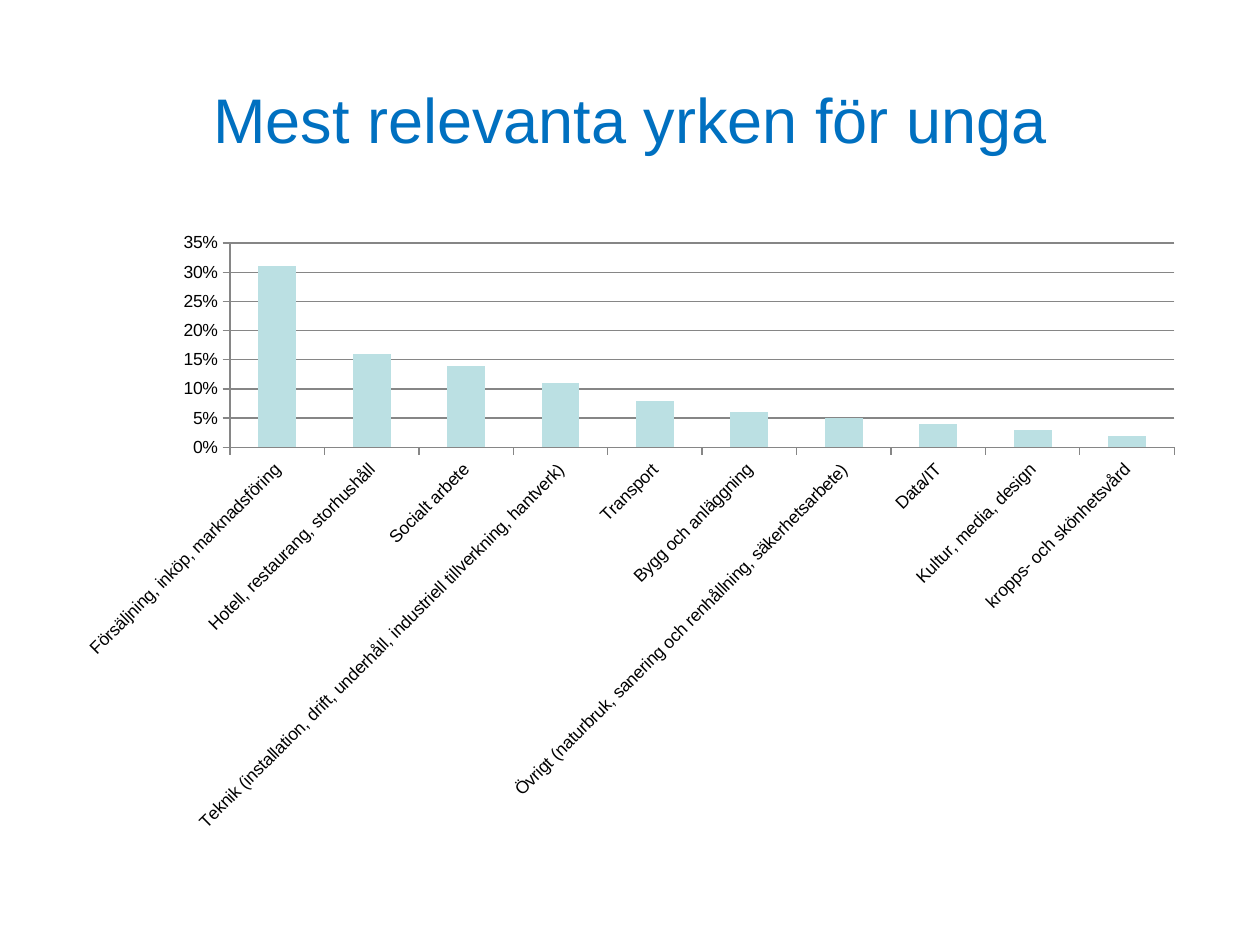
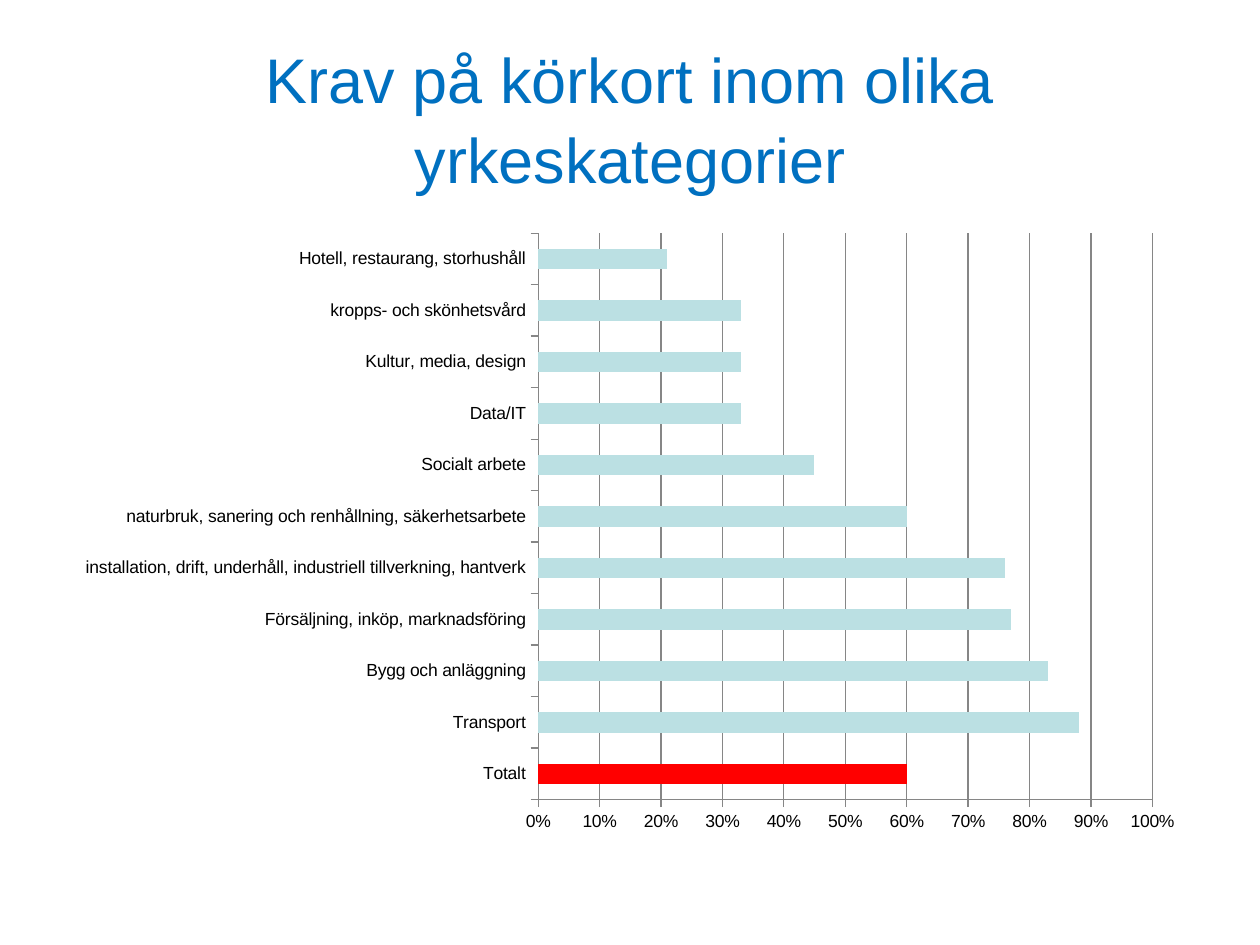
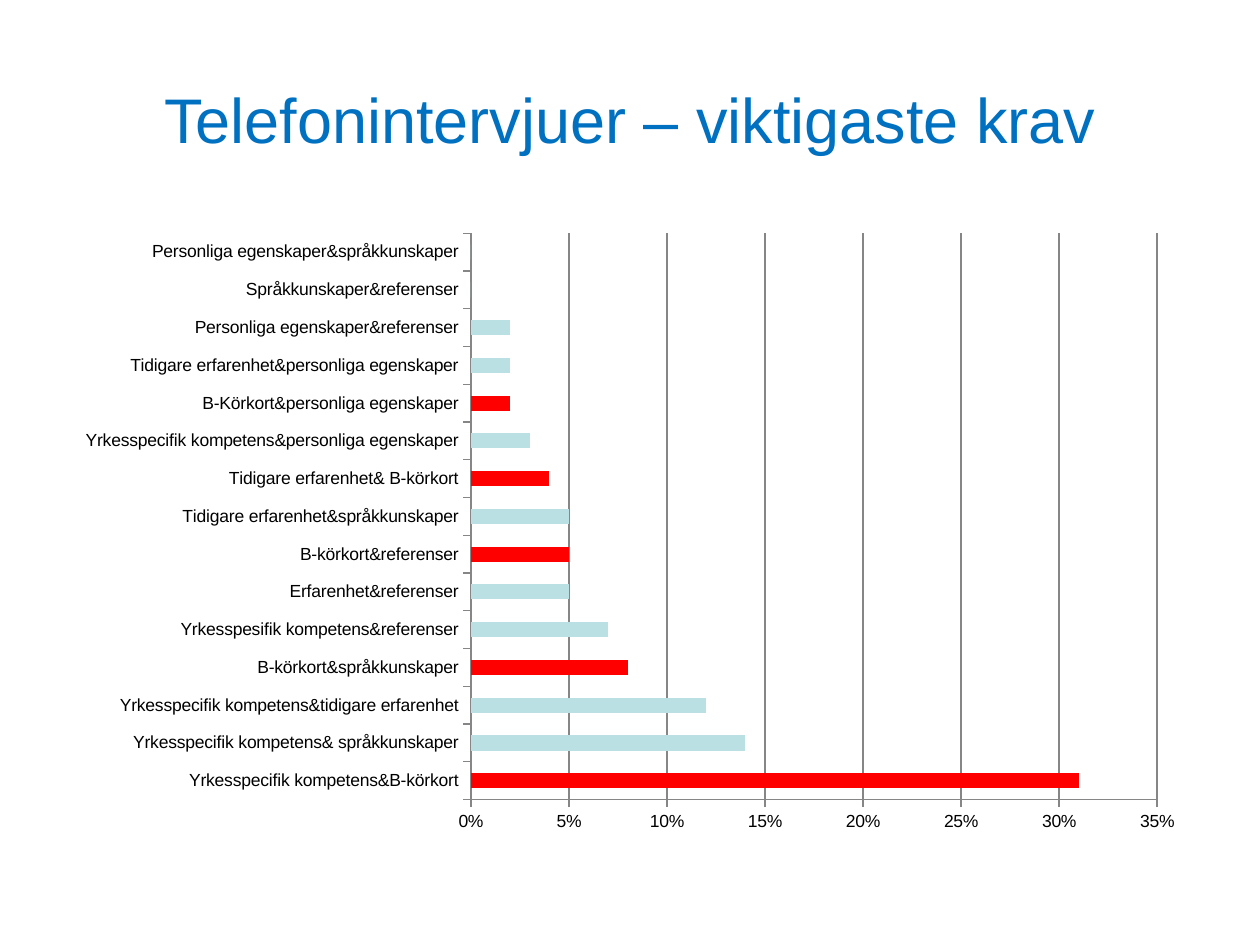
from dataclasses import dataclass

from pptx import Presentation
from pptx.chart.data import CategoryChartData
from pptx.dml.color import RGBColor
from pptx.enum.chart import XL_CHART_TYPE as ChartType, XL_TICK_MARK as TickMark
from pptx.enum.text import MSO_ANCHOR as Anchor, PP_ALIGN as Align
from pptx.util import Cm, Pt

FONT = "Arial"
TITLE_BLUE = "0070C0"
BAR_TEAL = "BBE0E3"
HIGHLIGHT_RED = "FF0000"
LINE_GREY = "868686"
TEXT_BLACK = "000000"


@dataclass
class Box:
    left: float
    top: float
    width: float
    height: float

    def lengths(self):
        return Cm(self.left), Cm(self.top), Cm(self.width), Cm(self.height)


TITLE_BOX = Box(1.27, 0.76, 22.86, 3.18)
CHART_BOX = Box(1.27, 4.45, 22.86, 12.57)


@dataclass
class ChartSlide:
    title: str
    chart_type: ChartType
    axis_maximum: float
    axis_step: float
    shares: dict
    highlight_words: tuple = ()
    label_angle: int = 0


OCCUPATIONS = ChartSlide(
    "Mest relevanta yrken för unga",
    ChartType.COLUMN_CLUSTERED, 0.35, 0.05,
    {
        "Försäljning, inköp, marknadsföring": 0.31,
        "Hotell, restaurang, storhushåll": 0.16,
        "Socialt arbete": 0.14,
        "Teknik (installation, drift, underhåll, industriell tillverkning, hantverk)": 0.11,
        "Transport": 0.08,
        "Bygg och anläggning": 0.06,
        "Övrigt (naturbruk, sanering och renhållning, säkerhetsarbete)": 0.05,
        "Data/IT": 0.04,
        "Kultur, media, design": 0.03,
        "kropps- och skönhetsvård": 0.02,
    },
    label_angle=-45,
)

LICENCE_DEMANDS = ChartSlide(
    "Krav på körkort inom olika yrkeskategorier",
    ChartType.BAR_CLUSTERED, 1, 0.1,
    {
        "Totalt": 0.6,
        "Transport": 0.88,
        "Bygg och anläggning": 0.83,
        "Försäljning, inköp, marknadsföring": 0.77,
        "installation, drift, underhåll, industriell tillverkning, hantverk": 0.76,
        "naturbruk, sanering och renhållning, säkerhetsarbete": 0.6,
        "Socialt arbete": 0.45,
        "Data/IT": 0.33,
        "Kultur, media, design": 0.33,
        "kropps- och skönhetsvård": 0.33,
        "Hotell, restaurang, storhushåll": 0.21,
    },
    highlight_words=("totalt",),
)

INTERVIEWS = ChartSlide(
    "Telefonintervjuer – viktigaste krav",
    ChartType.BAR_CLUSTERED, 0.35, 0.05,
    {
        "Yrkesspecifik kompetens&B-körkort": 0.31,
        "Yrkesspecifik kompetens& språkkunskaper": 0.14,
        "Yrkesspecifik kompetens&tidigare erfarenhet": 0.12,
        "B-körkort&språkkunskaper": 0.08,
        "Yrkesspesifik kompetens&referenser": 0.07,
        "Erfarenhet&referenser": 0.05,
        "B-körkort&referenser": 0.05,
        "Tidigare erfarenhet&språkkunskaper": 0.05,
        "Tidigare erfarenhet& B-körkort": 0.04,
        "Yrkesspecifik kompetens&personliga egenskaper": 0.03,
        "B-Körkort&personliga egenskaper": 0.02,
        "Tidigare erfarenhet&personliga egenskaper": 0.02,
        "Personliga egenskaper&referenser": 0.02,
        "Språkkunskaper&referenser": 0,
        "Personliga egenskaper&språkkunskaper": 0,
    },
    highlight_words=("b-körkort",),
)


def color(hex_string):
    return RGBColor.from_string(hex_string)


def style_font(font, size, hex_string):
    font.name = FONT
    font.size = Pt(size)
    font.color.rgb = color(hex_string)


def style_line(line):
    line.color.rgb = color(LINE_GREY)
    line.width = Pt(0.75)


def fill_solid(fill, hex_string):
    fill.solid()
    fill.fore_color.rgb = color(hex_string)


def add_title(slide, box, text):
    frame = slide.shapes.add_textbox(*box.lengths()).text_frame
    frame.word_wrap = True
    frame.vertical_anchor = Anchor.MIDDLE
    paragraph = frame.paragraphs[0]
    paragraph.text = text
    paragraph.alignment = Align.CENTER
    paragraph.line_spacing = 1.05
    style_font(paragraph.font, 36, TITLE_BLUE)


def style_axes(chart, content):
    for axis in (chart.category_axis, chart.value_axis):
        axis.major_tick_mark = TickMark.OUTSIDE
        axis.minor_tick_mark = TickMark.NONE
        style_line(axis.format.line)
        style_font(axis.tick_labels.font, 10, TEXT_BLACK)
    chart.category_axis.has_major_gridlines = False
    if content.label_angle:
        body = chart.element.xpath(".//c:catAx/c:txPr/a:bodyPr")[0]
        body.set("rot", str(content.label_angle * 60000))

    value_axis = chart.value_axis
    value_axis.minimum_scale = 0
    value_axis.maximum_scale = content.axis_maximum
    value_axis.major_unit = content.axis_step
    value_axis.has_major_gridlines = True
    style_line(value_axis.major_gridlines.format.line)
    value_axis.tick_labels.number_format = "0%"
    value_axis.tick_labels.number_format_is_linked = False


def add_share_chart(slide, box, content):
    data = CategoryChartData(number_format="0%")
    data.categories = content.shares.keys()
    data.add_series("Series 1", content.shares.values())
    chart = slide.shapes.add_chart(content.chart_type, *box.lengths(), data).chart
    chart.has_title = False
    chart.has_legend = False
    style_font(chart.font, 10, TEXT_BLACK)
    style_axes(chart, content)

    plot = chart.plots[0]
    plot.gap_width = 150
    plot.vary_by_categories = False
    series = plot.series[0]
    series.invert_if_negative = False
    fill_solid(series.format.fill, BAR_TEAL)
    for index, category in enumerate(content.shares):
        if any(word in category.lower() for word in content.highlight_words):
            fill_solid(series.points[index].format.fill, HIGHLIGHT_RED)


def add_chart_slide(presentation, content):
    slide = presentation.slides.add_slide(presentation.slide_layouts[6])
    add_title(slide, TITLE_BOX, content.title)
    add_share_chart(slide, CHART_BOX, content)


def main():
    presentation = Presentation()
    presentation.slide_width = Cm(25.4)
    presentation.slide_height = Cm(19.05)
    for content in (OCCUPATIONS, LICENCE_DEMANDS, INTERVIEWS):
        add_chart_slide(presentation, content)
    presentation.save("out.pptx")


if __name__ == "__main__":
    main()
